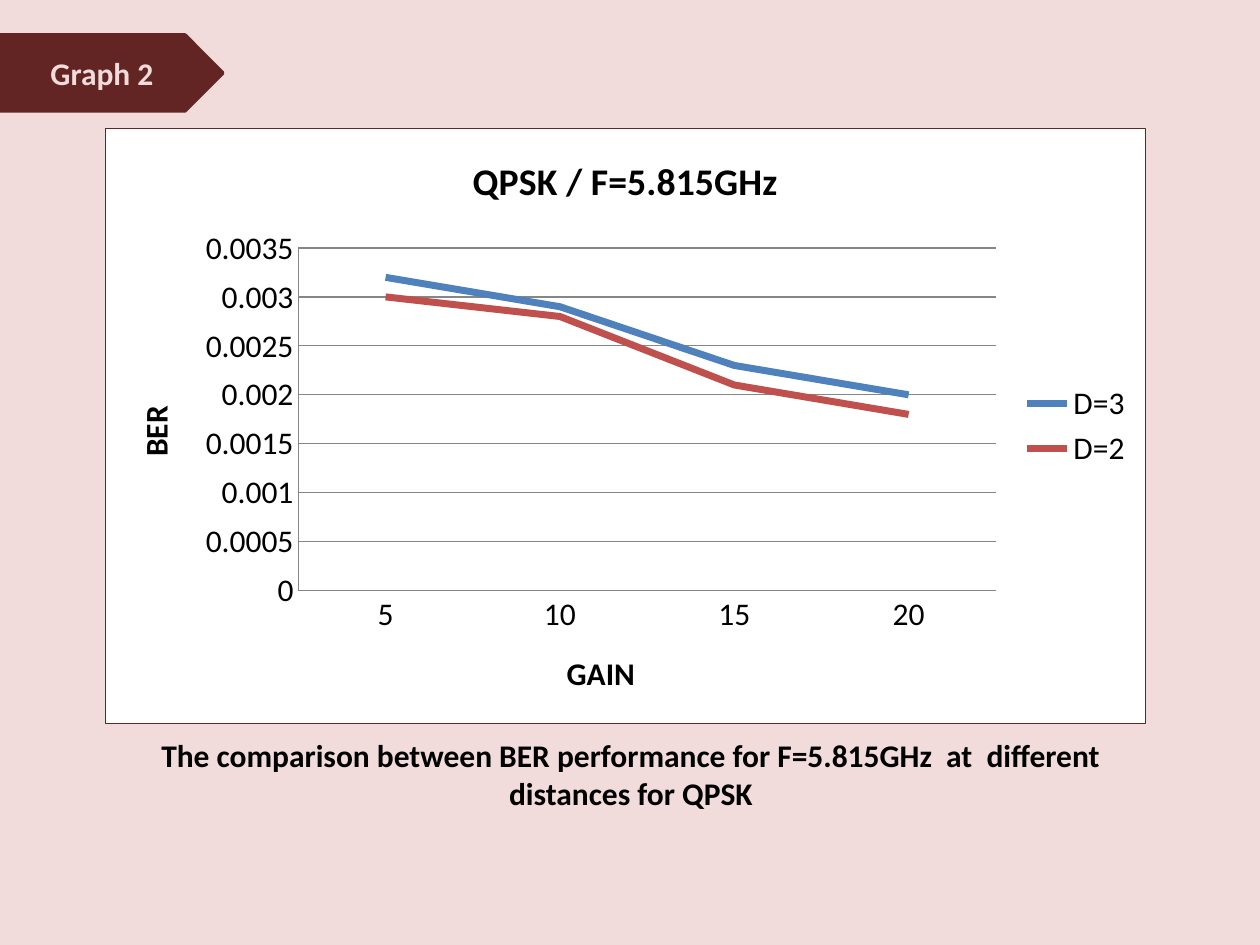
"""Build the slide comparing BER against gain for QPSK at two distances."""
from dataclasses import dataclass
from typing import NamedTuple

from pptx import Presentation
from pptx.chart.data import CategoryChartData
from pptx.dml.color import RGBColor
from pptx.enum.chart import XL_CHART_TYPE, XL_LEGEND_POSITION, XL_TICK_MARK
from pptx.enum.shapes import MSO_SHAPE
from pptx.enum.text import MSO_ANCHOR, PP_ALIGN
from pptx.oxml import parse_xml
from pptx.oxml.ns import nsdecls
from pptx.util import Emu, Pt

LINE_CHART = XL_CHART_TYPE.LINE
LEGEND_RIGHT = XL_LEGEND_POSITION.RIGHT
NO_TICK = XL_TICK_MARK.NONE
RECTANGLE = MSO_SHAPE.RECTANGLE
PENTAGON = MSO_SHAPE.PENTAGON
MIDDLE = MSO_ANCHOR.MIDDLE
CENTER = PP_ALIGN.CENTER

PINK = RGBColor(0xF2, 0xDC, 0xDB)
MAROON = RGBColor(0x63, 0x25, 0x23)
BLUE = RGBColor(0x4F, 0x81, 0xBD)
RED = RGBColor(0xC0, 0x50, 0x4D)
GRAY = RGBColor(0x86, 0x86, 0x86)
WHITE = RGBColor(0xFF, 0xFF, 0xFF)
BLACK = RGBColor(0, 0, 0)

EMU_PER_PX = 914400 // 126
FONT = "Calibri"
TEXT_SIZE = 18
TITLE_SIZE = 21.6


class Box(NamedTuple):
    left: int
    top: int
    width: int
    height: int

    def emu(self) -> list[Emu]:
        return [Emu(length * EMU_PER_PX) for length in self]


@dataclass
class Curve:
    name: str
    values: tuple[float, ...]
    color: RGBColor


PAGE = Box(0, 0, 1260, 945)
CHART = Box(105, 128, 1041, 596)
CAPTION = Box(110, 730, 1042, 94)
TAG = Box(0, 35, 223, 76)
GAINS = ("5", "10", "15", "20")
CURVES = (
    Curve("D=3", (0.0032, 0.0029, 0.0023, 0.002), BLUE),
    Curve("D=2", (0.003, 0.0028, 0.0021, 0.0018), RED),
)


def style_font(font, color: RGBColor, size: float = TEXT_SIZE, bold: bool = True) -> None:
    font.name = FONT
    font.size = Pt(size)
    font.bold = bold
    font.color.rgb = color


def write(frame, text: str, color: RGBColor = BLACK, size: float = TEXT_SIZE) -> None:
    para = frame.paragraphs[0]
    para.alignment = CENTER
    span = para.add_run()
    span.text = text
    style_font(span.font, color, size)


def add_block(page, kind: MSO_SHAPE, box: Box, fill: RGBColor):
    block = page.shapes.add_shape(kind, *box.emu())
    block.shadow.inherit = False
    block.fill.solid()
    block.fill.fore_color.rgb = fill
    block.line.fill.background()
    return block


def add_tag(page, text: str) -> None:
    tag = add_block(page, PENTAGON, TAG, MAROON)
    tag.line.color.rgb = MAROON
    tag.line.width = Pt(2)
    tag.text_frame.vertical_anchor = MIDDLE
    write(tag.text_frame, text, PINK)


def add_caption(page, text: str) -> None:
    caption = page.shapes.add_textbox(*CAPTION.emu())
    caption.text_frame.word_wrap = True
    write(caption.text_frame, text)


def style_axis(axis, title: str) -> None:
    write(axis.axis_title.text_frame, title)
    axis.major_tick_mark = NO_TICK
    axis.minor_tick_mark = NO_TICK
    axis.format.line.color.rgb = GRAY
    axis.format.line.width = Pt(0.75)


def frame_chart(chart) -> None:
    area = parse_xml(
        f'<c:spPr {nsdecls("c", "a")}>'
        f'<a:solidFill><a:srgbClr val="{WHITE}"/></a:solidFill>'
        f'<a:ln w="{Pt(0.75)}"><a:solidFill><a:srgbClr val="{MAROON}"/></a:solidFill></a:ln>'
        "</c:spPr>"
    )
    chart.element.chart.addnext(area)


def add_ber_chart(page) -> None:
    data = CategoryChartData()
    data.categories = GAINS
    for curve in CURVES:
        data.add_series(curve.name, curve.values)
    chart = page.shapes.add_chart(LINE_CHART, *CHART.emu(), data).chart
    style_font(chart.font, BLACK, bold=False)
    frame_chart(chart)

    chart.has_title = True
    write(chart.chart_title.text_frame, "QPSK / F=5.815GHz", size=TITLE_SIZE)
    chart.chart_title.include_in_layout = False
    chart.has_legend = True
    chart.legend.position = LEGEND_RIGHT
    chart.legend.include_in_layout = False

    style_axis(chart.category_axis, "GAIN")
    style_axis(chart.value_axis, "BER")
    chart.value_axis.has_major_gridlines = True
    grid_line = chart.value_axis.major_gridlines.format.line
    grid_line.color.rgb = GRAY
    grid_line.width = Pt(0.75)

    plot = chart.plots[0]
    plot.vary_by_categories = False
    for series, curve in zip(plot.series, CURVES):
        series.smooth = False
        series.format.line.color.rgb = curve.color
        series.format.line.width = Pt(4)


def main() -> None:
    deck = Presentation()
    deck.slide_width, deck.slide_height = PAGE.emu()[2:]
    page = deck.slides.add_slide(deck.slide_layouts[6])
    add_block(page, RECTANGLE, PAGE, PINK)
    add_ber_chart(page)
    add_caption(
        page,
        "The comparison between BER performance for F=5.815GHz  at  different distances for QPSK",
    )
    add_tag(page, "Graph 2")
    deck.save("out.pptx")


if __name__ == "__main__":
    main()
